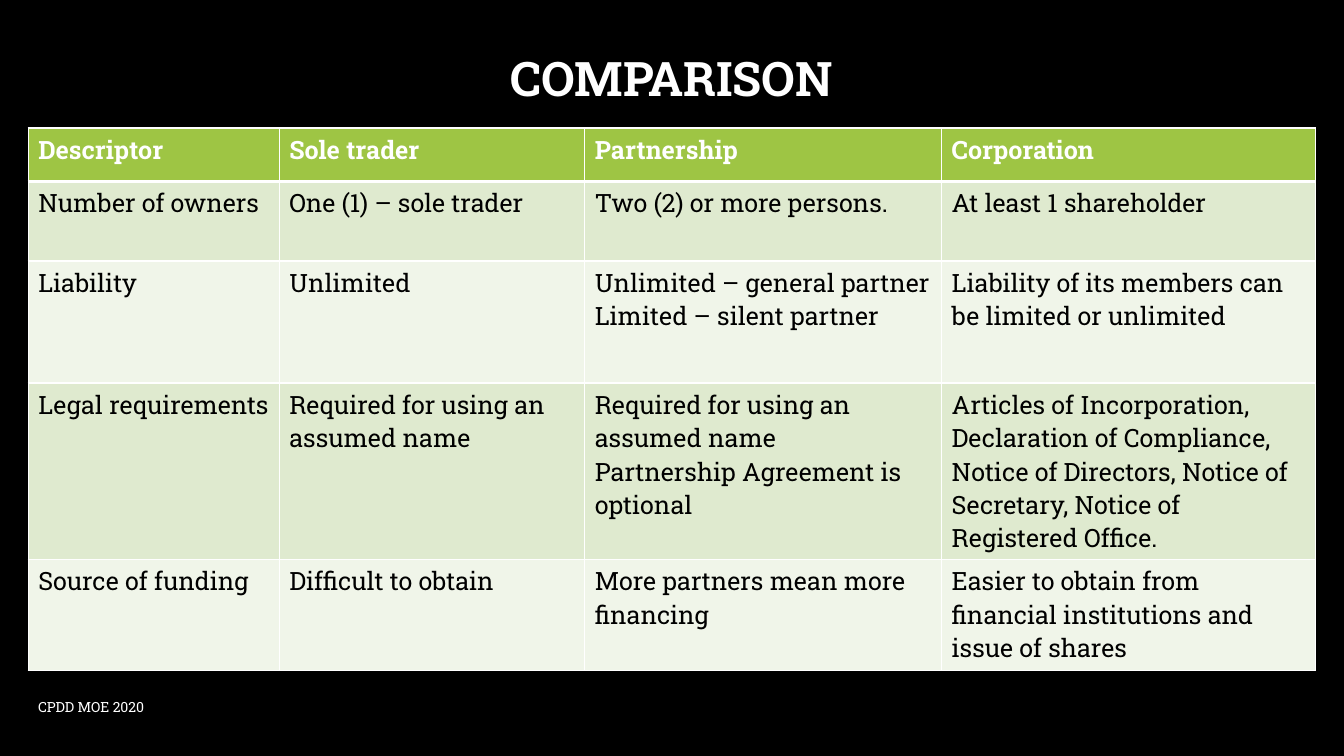
from lxml.etree import SubElement
from pptx import Presentation
from pptx.dml.color import RGBColor
from pptx.enum.text import MSO_ANCHOR as Anchor, PP_ALIGN as Align
from pptx.oxml.ns import qn
from pptx.util import Inches, Pt

TITLE = "COMPARISON"
FOOTER = "CPDD MOE 2020"
ROWS = [
    ["Descriptor", "Sole trader", "Partnership", "Corporation"],
    ["Number of owners", "One (1) – sole trader", "Two (2) or more persons.",
     "At least 1 shareholder"],
    ["Liability", "Unlimited",
     "Unlimited – general partner\nLimited – silent partner",
     "Liability of its members can be limited or unlimited"],
    ["Legal requirements", "Required for using an assumed name",
     "Required for using an assumed name\nPartnership Agreement is optional",
     "Articles of Incorporation, Declaration of Compliance, Notice of Directors, "
     "Notice of Secretary, Notice of Registered Office."],
    ["Source of funding", "Difficult to obtain", "More partners mean more financing",
     "Easier to obtain from financial institutions and issue of shares"],
]
COLUMN_WIDTHS = [2.49, 3.03, 3.54, 3.71]
ROW_HEIGHTS = [0.53, 0.79, 1.21, 1.75, 1.1]
LEFT, TABLE_TOP = 0.28, 1.27
FONT = "Roboto Slab"
COLORS = {"background": "000000", "light": "FFFFFF", "dark": "000000",
          "header": "9EC544", "odd": "DFEACF", "even": "F0F5E9"}


def color(name):
    return RGBColor.from_string(COLORS[name])


def write(frame, text, size=18, ink="dark", bold=False, align=Align.LEFT,
          spacing=1.0, anchor=None):
    frame.word_wrap = True
    if anchor is not None:
        frame.vertical_anchor = anchor
    for index, line in enumerate(text.split("\n")):
        paragraph = frame.add_paragraph() if index else frame.paragraphs[0]
        paragraph.alignment = align
        paragraph.line_spacing = spacing
        run = paragraph.add_run()
        run.text = line
        run.font.name = FONT
        run.font.size = Pt(size)
        run.font.bold = bold
        run.font.color.rgb = color(ink)


def set_borders(cell, **widths):
    """Draw the cell's edges; widths are points, keyed L, R, T and B."""
    properties = cell._tc.get_or_add_tcPr()
    for side, width in widths.items():
        line = SubElement(properties, qn(f"a:ln{side}"), w=str(Pt(width)))
        fill = SubElement(line, qn("a:solidFill"))
        SubElement(fill, qn("a:srgbClr"), val=COLORS["light"])


def add_comparison(slide):
    frame = slide.shapes.add_table(
        len(ROWS), len(COLUMN_WIDTHS), Inches(LEFT), Inches(TABLE_TOP),
        Inches(sum(COLUMN_WIDTHS)), Inches(sum(ROW_HEIGHTS)))
    table = frame.table
    for column, width in zip(table.columns, COLUMN_WIDTHS):
        column.width = Inches(width)
    for row, height in zip(table.rows, ROW_HEIGHTS):
        row.height = Inches(height)
    for r, texts in enumerate(ROWS):
        header = r == 0
        band = "header" if header else "odd" if r % 2 else "even"
        for c, text in enumerate(texts):
            cell = table.cell(r, c)
            set_borders(cell, L=1, R=1, T=3 if r == 1 else 1, B=3 if header else 1)
            cell.fill.solid()
            cell.fill.fore_color.rgb = color(band)
            write(cell.text_frame, text, ink="light" if header else "dark", bold=header)


def main():
    presentation = Presentation()
    presentation.slide_width = Inches(13.33)
    presentation.slide_height = Inches(7.5)
    slide = presentation.slides.add_slide(presentation.slide_layouts[5])
    slide.background.fill.solid()
    slide.background.fill.fore_color.rgb = color("background")

    title = slide.shapes.title
    title.left, title.top = Inches(1), Inches(0.34)
    title.width, title.height = Inches(11.32), Inches(0.93)
    write(title.text_frame, TITLE, size=34, ink="light", bold=True,
          align=Align.CENTER, spacing=0.9, anchor=Anchor.MIDDLE)

    footer = slide.shapes.add_textbox(Inches(LEFT), Inches(6.81), Inches(7.3), Inches(0.4))
    write(footer.text_frame, FOOTER, size=10, ink="light", anchor=Anchor.MIDDLE)

    add_comparison(slide)
    presentation.save("out.pptx")


if __name__ == "__main__":
    main()
